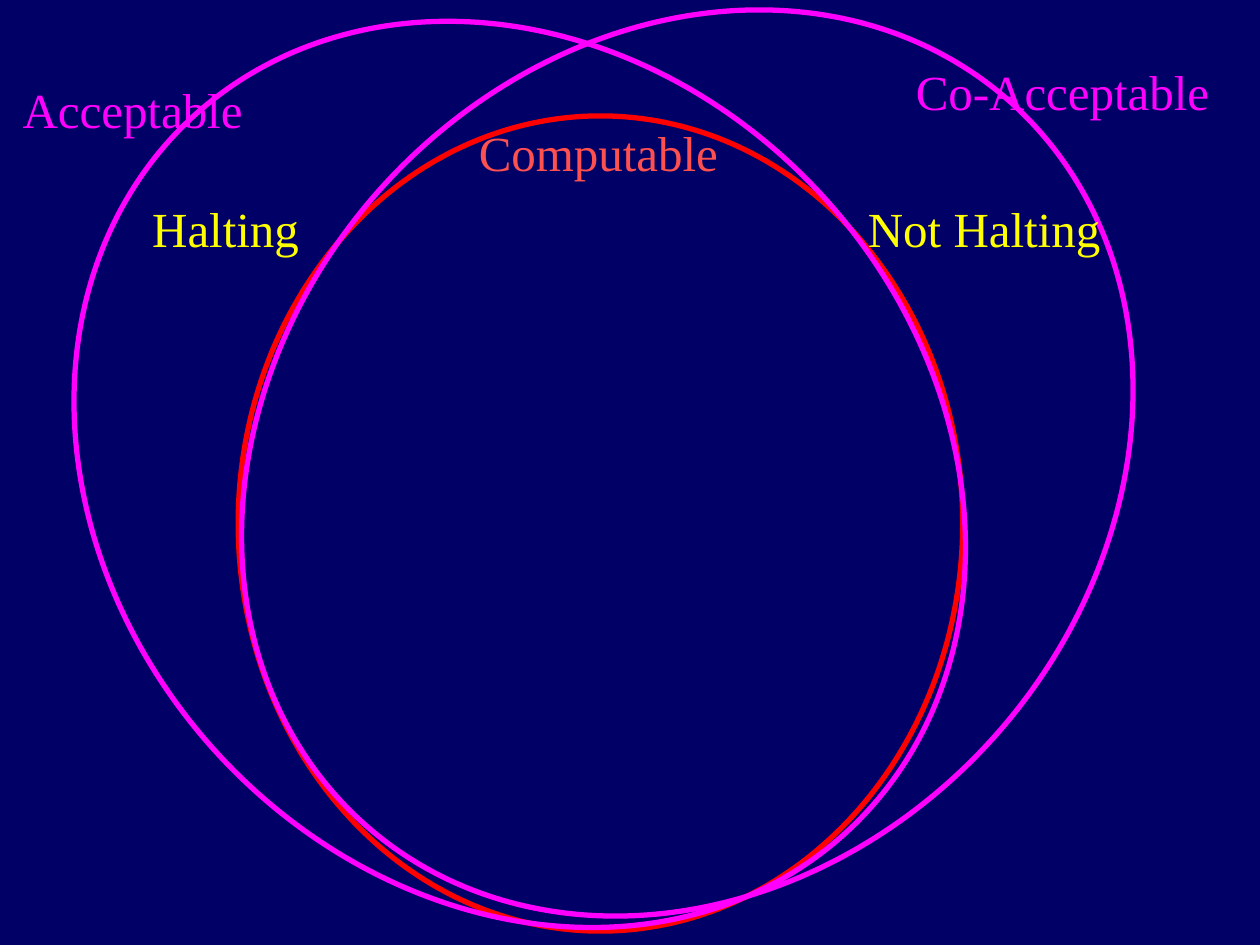
from pptx import Presentation
from pptx.dml.color import RGBColor
from pptx.enum.shapes import MSO_SHAPE
from pptx.enum.text import MSO_ANCHOR, MSO_AUTO_SIZE
from pptx.util import Inches, Pt

FONT = "Times New Roman"
BACKGROUND, RED, CORAL, MAGENTA, YELLOW = "000066", "FF0000", "FF5050", "FF00FF", "FFFF00"
TILT = 42.1
LABEL_HEIGHT = 0.57
TOP, MIDDLE = MSO_ANCHOR.TOP, MSO_ANCHOR.MIDDLE

COMPUTABLE_SET = (1.89, 0.92, 5.75, 6.47, 0, RED)
ACCEPTABLE_SET = (0.86, -0.08, 6.53, 7.69, 360 - TILT, MAGENTA)
CO_ACCEPTABLE_SET = (2.19, -0.17, 6.53, 7.69, TILT, MAGENTA)

COMPUTABLE = ("Computable", 3.5, 0.92, 2.5, 0.3, TOP, CORAL)
ACCEPTABLE = ("Acceptable", -0.12, 0.58, 2.37, 0.3, MIDDLE, MAGENTA)
HALTING = ("Halting", 1.11, 1.53, 1.37, 0.1, TOP, YELLOW)
CO_ACCEPTABLE = ("Co-Acceptable", 7.17, 0.44, 2.55, 0.1, TOP, MAGENTA)
NOT_HALTING = ("Not Halting", 6.79, 1.53, 2.07, 0.1, TOP, YELLOW)


def color(value):
    return RGBColor.from_string(value)


def add_set(shapes, left, top, width, height, rotation, line_color):
    ellipse = shapes.add_shape(
        MSO_SHAPE.OVAL, Inches(left), Inches(top), Inches(width), Inches(height))
    ellipse.rotation = rotation
    ellipse.shadow.inherit = False
    ellipse.fill.background()
    ellipse.line.color.rgb = color(line_color)
    ellipse.line.width = Pt(3)


def add_label(shapes, text, left, top, width, inset, anchor, text_color):
    box = shapes.add_textbox(
        Inches(left), Inches(top), Inches(width), Inches(LABEL_HEIGHT))
    frame = box.text_frame
    frame.word_wrap = False
    frame.auto_size = MSO_AUTO_SIZE.SHAPE_TO_FIT_TEXT
    frame.vertical_anchor = anchor
    frame.margin_left = frame.margin_right = Inches(inset)
    paragraph = frame.paragraphs[0]
    paragraph.text = text
    paragraph.font.name = FONT
    paragraph.font.size = Pt(28)
    paragraph.font.color.rgb = color(text_color)


def add_labelled_set(page, region, label):
    group = page.shapes.add_group_shape()
    add_set(group.shapes, *region)
    add_label(group.shapes, *label)


def main():
    deck = Presentation()
    deck.slide_width, deck.slide_height = Inches(10), Inches(7.5)
    page = deck.slides.add_slide(deck.slide_layouts[6])
    page.background.fill.solid()
    page.background.fill.fore_color.rgb = color(BACKGROUND)

    add_labelled_set(page, COMPUTABLE_SET, COMPUTABLE)
    add_labelled_set(page, ACCEPTABLE_SET, ACCEPTABLE)
    add_label(page.shapes, *HALTING)
    add_labelled_set(page, CO_ACCEPTABLE_SET, CO_ACCEPTABLE)
    add_label(page.shapes, *NOT_HALTING)
    deck.save("out.pptx")


if __name__ == "__main__":
    main()
